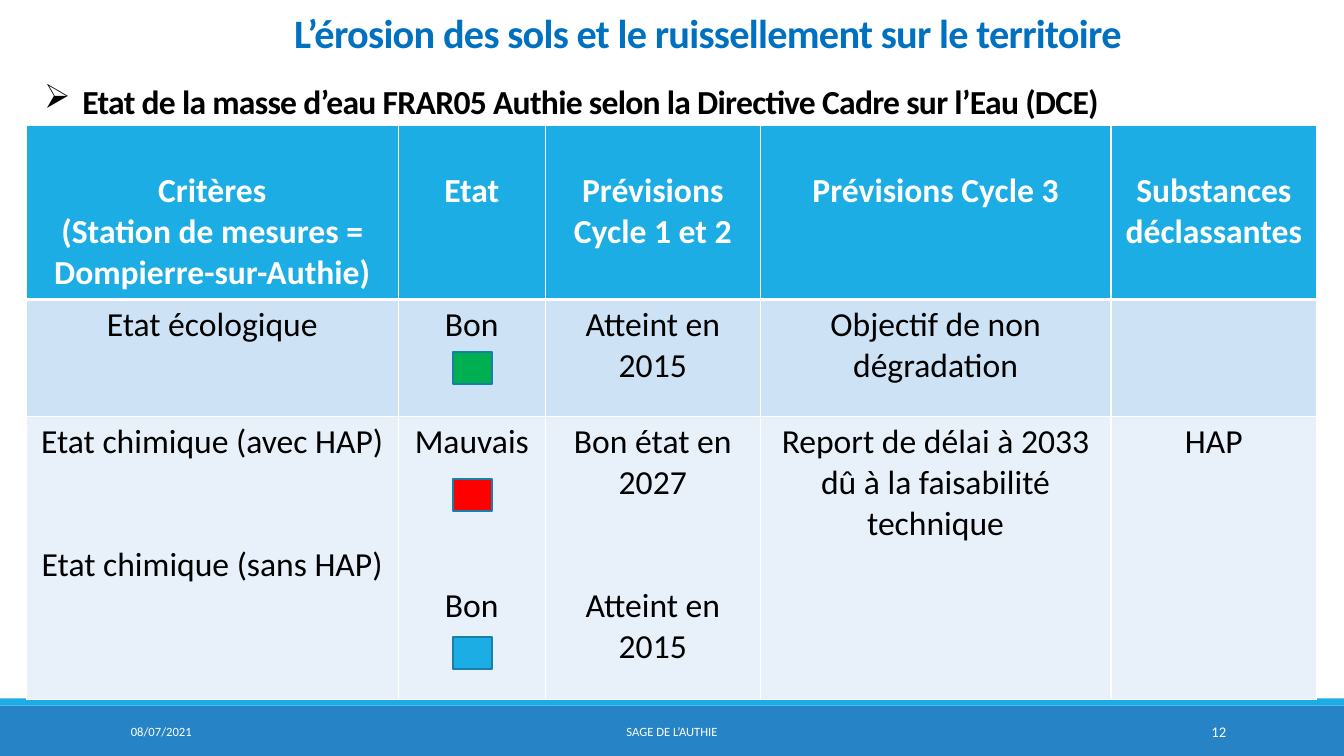
from lxml import etree
from pptx import Presentation, util as u
from pptx.dml.color import RGBColor
from pptx.enum import shapes, text
from pptx.oxml.ns import qn

WHITE = RGBColor(0xFF, 0xFF, 0xFF)
BLACK = RGBColor(0, 0, 0)
CYAN = RGBColor(0x1C, 0xAD, 0xE4)
BLUE = RGBColor(0x26, 0x83, 0xC6)
TITLE_BLUE = RGBColor(0x00, 0x70, 0xC0)
PALE_BLUE = RGBColor(0xCD, 0xE3, 0xF5)
PALER_BLUE = RGBColor(0xE8, 0xF1, 0xFA)
MARK_EDGE = RGBColor(0x15, 0x80, 0xA9)
GREEN = RGBColor(0x00, 0xB0, 0x50)
RED = RGBColor(0xFF, 0, 0)
LEFT, CENTER, RIGHT = text.PP_ALIGN.LEFT, text.PP_ALIGN.CENTER, text.PP_ALIGN.RIGHT
MIDDLE, BOTTOM = text.MSO_ANCHOR.MIDDLE, text.MSO_ANCHOR.BOTTOM
LINE_PT = 29.3  # height of one line of 24 pt text

prs = Presentation()
prs.slide_width, prs.slide_height = u.Inches(13.33), u.Inches(7.5)
slide = prs.slides.add_slide(prs.slide_layouts[6])


def write(paragraph, words, size, color, align, bold=False):
    paragraph.alignment = align
    run = paragraph.add_run()
    run.text = words
    run.font.name, run.font.size, run.font.bold = "Calibri", u.Pt(size), bold
    run.font.color.rgb = color
    return run


def add_rect(left, top, width, height, fill):
    rect = slide.shapes.add_shape(shapes.MSO_SHAPE.RECTANGLE, *map(u.Inches, (left, top, width, height)))
    rect.shadow.inherit = False
    rect.fill.solid()
    rect.fill.fore_color.rgb = fill
    rect.line.fill.background()
    return rect


# Footer bands
add_rect(0, 7, 13.33, 0.5, BLUE)
add_rect(0, 6.93, 13.33, 0.07, CYAN)

# Footer texts, heading and title: place, words, size, colour, alignment, anchor
for place, words, size, color, align, anchor in [
    ((1.2, 7.06, 2.7, 0.4), "08/07/2021", 9, WHITE, LEFT, MIDDLE),
    ((4.03, 7.06, 5.27, 0.4), "SAGE DE L’AUTHIE", 9, WHITE, CENTER, MIDDLE),
    ((10.83, 7.06, 1.43, 0.4), "12", 10.5, WHITE, RIGHT, MIDDLE),
    ((0.34, 0.87, 12.73, 0.38),
     "Etat de la masse d’eau FRAR05 Authie selon la Directive Cadre sur l’Eau (DCE)",
     24, BLACK, LEFT, BOTTOM),
    ((1.52, 0.05, 11, 0.56), "L’érosion des sols et le ruissellement sur le territoire",
     28.8, TITLE_BLUE, CENTER, BOTTOM),
]:
    frame = slide.shapes.add_textbox(*map(u.Inches, place)).text_frame
    frame.word_wrap, frame.vertical_anchor = True, anchor
    paragraph = frame.paragraphs[0]
    heading = anchor == BOTTOM
    run = write(paragraph, words, size, color, align, heading)
    if heading:
        paragraph.line_spacing = 0.85
        run.font._element.set("spc", "-50")
    if heading and align == LEFT:
        bullet = paragraph._p.get_or_add_pPr()
        bullet.set("marL", str(u.Inches(0.38)))
        bullet.set("indent", str(u.Inches(-0.38)))
        etree.SubElement(bullet, qn("a:buChar"), char="➢")

# Table: each cell lists (lines left free above, words)
columns = [3.69, 1.46, 2.13, 3.48, 2.04]
heights = [1.73, 1.16, 2.81]
row_fills = [CYAN, PALE_BLUE, PALER_BLUE]
criteria = [
    [[(0, "Critères"), (0, "(Station de mesures = Dompierre-sur-Authie)")], [(0, "Etat")],
     [(0, "Prévisions Cycle 1 et 2")], [(0, "Prévisions Cycle 3")],
     [(0, "Substances déclassantes")]],
    [[(0, "Etat écologique")], [(0, "Bon")], [(0, "Atteint en 2015")],
     [(0, "Objectif de non dégradation")], []],
    [[(0, "Etat chimique (avec HAP)"), (2, "Etat chimique (sans HAP)")],
     [(0, "Mauvais"), (3, "Bon")],
     [(0, "Bon état en 2027"), (2, "Atteint en 2015")],
     [(0, "Report de délai à 2033 dû à la faisabilité technique")], [(0, "HAP")]],
]
table = slide.shapes.add_table(
    len(heights), len(columns),
    *map(u.Inches, (0.26, 1.24, sum(columns), sum(heights)))).table
for c, width in enumerate(columns):
    table.columns[c].width = u.Inches(width)
for r, height in enumerate(heights):
    table.rows[r].height = u.Inches(height)
    for c, lines in enumerate(criteria[r]):
        cell = table.cell(r, c)
        # White borders, thicker under the header
        borders = cell._tc.get_or_add_tcPr()
        for side in "LRTB":
            thick = (r, side) in [(0, "B"), (1, "T")]
            edge = etree.SubElement(borders, qn("a:ln" + side), w=str(u.Pt(3 if thick else 1)))
            paint = etree.SubElement(edge, qn("a:solidFill"))
            etree.SubElement(paint, qn("a:srgbClr"), val=str(WHITE))
        cell.fill.solid()
        cell.fill.fore_color.rgb = row_fills[r]
        if r == 0:
            cell.margin_top = u.Inches(0.05) + u.Pt(LINE_PT)
        for i, (free, words) in enumerate(lines):
            paragraph = cell.text_frame.paragraphs[0] if i == 0 else cell.text_frame.add_paragraph()
            if free:
                paragraph.space_before = u.Pt(free * LINE_PT)
            write(paragraph, words, 24, BLACK if r else WHITE, CENTER, r == 0)

# State colour marks
for top, state in [(3.49, GREEN), (4.75, RED), (6.32, CYAN)]:
    mark = add_rect(4.49, top, 0.39, 0.32, state)
    mark.line.color.rgb = MARK_EDGE
    mark.line.width = u.Pt(1.25)

prs.save("out.pptx")
